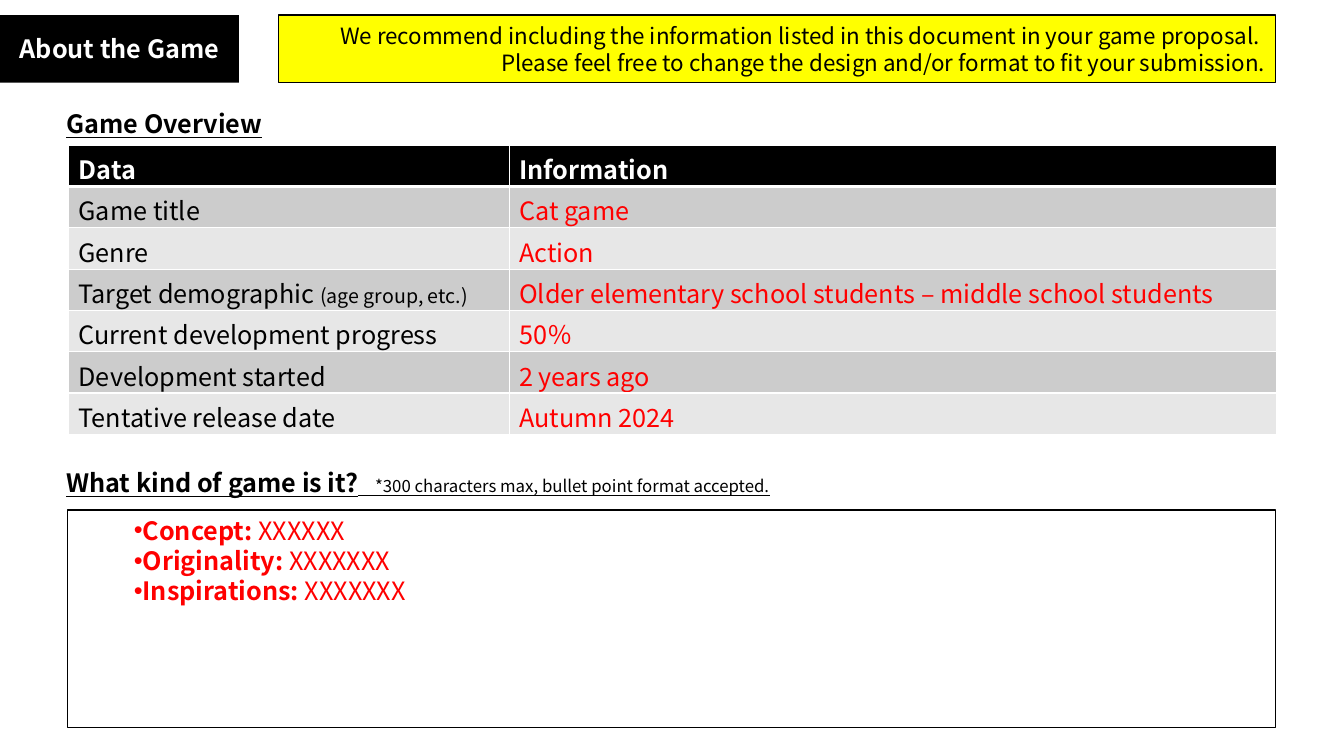
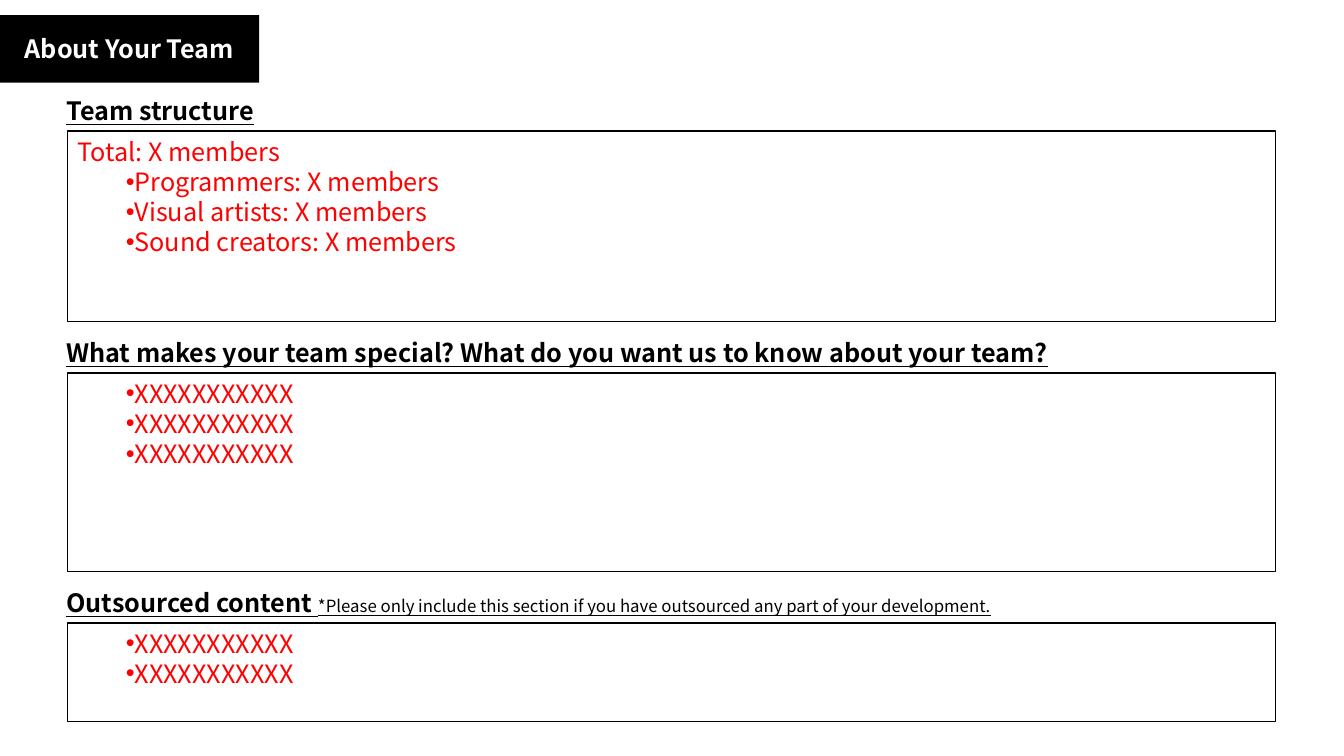
from lxml import etree
from pptx import Presentation
from pptx.dml.color import RGBColor
from pptx.enum import shapes, text
from pptx.oxml import ns
from pptx.util import Inches, Pt

FONT = "Noto Sans CJK JP"
BLACK = RGBColor(0x00, 0x00, 0x00)
WHITE = RGBColor(0xFF, 0xFF, 0xFF)
RED = RGBColor(0xFF, 0x00, 0x00)
YELLOW = RGBColor(0xFF, 0xFF, 0x00)
BANDS = RGBColor(0xCC, 0xCC, 0xCC), RGBColor(0xE7, 0xE7, 0xE7)

LEFT, WIDTH = 0.67, 11.98
BAND_TOP, BAND_HEIGHT = 0.15, 0.67
ROW_HEIGHT = 0.41


def add_run(p, words, color, size=18, bold=False, underline=False):
    r = p.add_run()
    r.text = words
    r.font.name = FONT
    r.font.size = Pt(size)
    r.font.color.rgb = color
    r.font.bold = bold
    r.font.underline = underline
    ea = etree.SubElement(r.font._element, ns.qn("a:ea"))
    ea.set("typeface", FONT)


def paragraphs(tf, count):
    """Return the first paragraph of the frame followed by new ones."""
    return [tf.paragraphs[0]] + [tf.add_paragraph() for _ in range(count - 1)]


def set_bullet(p, margin, indent):
    pPr = p._p.get_or_add_pPr()
    pPr.set("marL", str(Inches(margin)))
    pPr.set("indent", str(Inches(indent)))
    etree.SubElement(pPr, ns.qn("a:buFont")).set("typeface", "Arial")
    etree.SubElement(pPr, ns.qn("a:buChar")).set("char", "•")


def add_box(s, left, top, width, height, fill, outlined=True):
    """Draw a plain rectangle and return its text frame."""
    sp = s.shapes.add_shape(shapes.MSO_SHAPE.RECTANGLE, Inches(left),
                            Inches(top), Inches(width), Inches(height))
    sp.shadow.inherit = False
    sp.fill.solid()
    sp.fill.fore_color.rgb = fill
    if outlined:
        sp.line.color.rgb = BLACK
        sp.line.width = Pt(1)
    else:
        sp.line.fill.background()
    tf = sp.text_frame
    tf.word_wrap = True
    return tf


def add_title(s, words, width):
    tf = add_box(s, 0, BAND_TOP, width, BAND_HEIGHT, BLACK, outlined=False)
    tf.vertical_anchor = text.MSO_ANCHOR.MIDDLE
    p = tf.paragraphs[0]
    p.alignment = text.PP_ALIGN.CENTER
    add_run(p, words, WHITE, bold=True)


def add_advice(s, left, lines):
    tf = add_box(s, left, BAND_TOP, LEFT + WIDTH - left, BAND_HEIGHT, YELLOW)
    tf.vertical_anchor = text.MSO_ANCHOR.MIDDLE
    for p, line in zip(paragraphs(tf, len(lines)), lines):
        p.alignment = text.PP_ALIGN.RIGHT
        add_run(p, line, BLACK, 16)


def add_heading(s, top, words, note="", width=10.75):
    sp = s.shapes.add_textbox(Inches(LEFT - 0.11), Inches(top),
                              Inches(width), Inches(0.4))
    sp.text_frame.word_wrap = True
    p = sp.text_frame.paragraphs[0]
    add_run(p, words, BLACK, bold=True, underline=True)
    if note:
        add_run(p, note, BLACK, 12, underline=True)


def add_answer(s, top, height, items, intro="", margin=0.2):
    """Draw an answer box; each item is a (bold label, words) bullet."""
    tf = add_box(s, LEFT, top, WIDTH, height, WHITE)
    tf.vertical_anchor = text.MSO_ANCHOR.TOP
    lines = paragraphs(tf, len(items) + bool(intro))
    for p in lines:
        p.alignment = text.PP_ALIGN.LEFT
    if intro:
        add_run(lines.pop(0), intro, RED)
    for p, (label, words) in zip(lines, items):
        set_bullet(p, margin, 0.28)
        if label:
            add_run(p, label, RED, bold=True)
        add_run(p, words, RED)


def set_borders(cell, bottom):
    """Give the cell white edges, 1 pt except for the bottom one."""
    tcPr = cell._tc.get_or_add_tcPr()
    edges = {"lnL": 1, "lnR": 1, "lnT": 1, "lnB": bottom}
    for i, (tag, width) in enumerate(edges.items()):
        ln = etree.Element(ns.qn("a:" + tag), w=str(Pt(width)))
        fill = etree.SubElement(ln, ns.qn("a:solidFill"))
        etree.SubElement(fill, ns.qn("a:srgbClr")).set("val", str(WHITE))
        tcPr.insert(i, ln)


def add_overview(s, top, header, rows):
    """Draw the table; a row is (data, small note, information)."""
    count = len(rows) + 1
    table = s.shapes.add_table(count, 2, Inches(LEFT + 0.01), Inches(top),
                               Inches(WIDTH), Inches(ROW_HEIGHT * count)).table
    for column, width in zip(table.columns, (4.37, 7.61)):
        column.width = Inches(width)
    for row in table.rows:
        row.height = Inches(ROW_HEIGHT)
    for i in range(count):
        for j in range(2):
            cell = table.cell(i, j)
            cell.fill.solid()
            cell.fill.fore_color.rgb = BANDS[(i - 1) % 2] if i else BLACK
            set_borders(cell, 1 if i else 3)
            p = cell.text_frame.paragraphs[0]
            if i == 0:
                add_run(p, header[j], WHITE, bold=True)
                continue
            data, note, information = rows[i - 1]
            if j == 1:
                add_run(p, information, RED)
                continue
            add_run(p, data, BLACK)
            if note:
                add_run(p, note, BLACK, 14)


def game_slide(s):
    add_heading(s, 1.03, "Game Overview")
    add_overview(s, 1.44, ("Data", "Information"), [
        ("Game title", "", "Cat game"),
        ("Genre", "", "Action"),
        ("Target demographic ", "(age group, etc.)",
         "Older elementary school students – middle school students"),
        ("Current development progress", "", "50％"),
        ("Development started", "", "2 years ago"),
        ("Tentative release date", "", "Autumn 2024"),
    ])
    add_heading(s, 4.59, "What kind of game is it?",
                "　*300 characters max, bullet point format accepted.")
    add_answer(s, 5.06, 2.16, [("Concept: ", "XXXXXX"),
                               ("Originality: ", "XXXXXXX"),
                               ("Inspirations: ", "XXXXXXX")], margin=0.28)
    add_title(s, "About the Game", 2.37)
    add_advice(s, 2.76, [
        "We recommend including the information listed in this document "
        "in your game proposal. ",
        "Please feel free to change the design and/or format to fit "
        "your submission.",
    ])


def team_slide(s):
    blank = ("", "XXXXXXXXXXX")
    add_title(s, "About Your Team", 2.57)
    add_heading(s, 0.9, "Team structure")
    roles = "Programmers", "Visual artists", "Sound creators"
    add_answer(s, 1.3, 1.89, [("", f"{role}: X members") for role in roles],
               intro="Total: X members")
    add_heading(s, 3.3, "What makes your team special? "
                "What do you want us to know about your team?", width=11.11)
    add_answer(s, 3.7, 1.97, [blank] * 3)
    add_heading(s, 5.78, "Outsourced content ",
                "*Please only include this section if you have outsourced "
                "any part of your development.")
    add_answer(s, 6.18, 0.98, [blank] * 2)


def main():
    prs = Presentation()
    prs.slide_width, prs.slide_height = Inches(13.33), Inches(7.5)
    for build in (game_slide, team_slide):
        build(prs.slides.add_slide(prs.slide_layouts[6]))
    prs.save("out.pptx")


if __name__ == "__main__":
    main()
